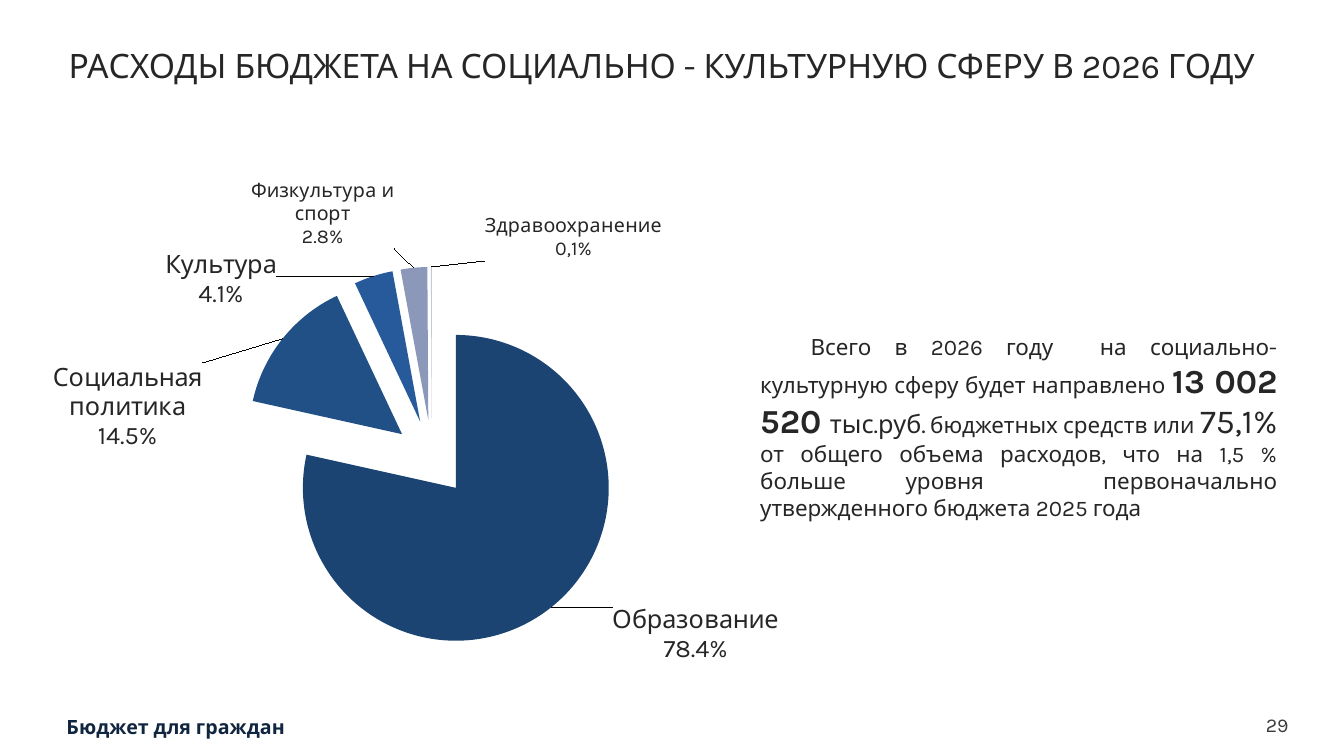
from typing import NamedTuple

import lxml.etree
import pptx
import pptx.chart.data
import pptx.dml.color
import pptx.enum.chart
import pptx.enum.text
import pptx.oxml
import pptx.oxml.ns
import pptx.util

Inches, Pt = pptx.util.Inches, pptx.util.Pt
qn = pptx.oxml.ns.qn
ALIGN = pptx.enum.text.PP_ALIGN
ANCHOR = pptx.enum.text.MSO_ANCHOR
FONT = "Karla"
COLORS = {"text": "262626", "number": "3C3C3C", "footer": "10253F",
          "education": "1C4473", "social": "215087", "culture": "265A9A",
          "sport": "8C98BA", "health": "C3C8DA"}


class Run(NamedTuple):
    text: str
    size: float
    bold: bool = False
    color: str = "text"


class Box(NamedTuple):
    left: float
    top: float
    width: float
    height: float


class Slice(NamedTuple):
    name: str
    value: float
    color: str
    size: float
    dx: float  # label shift as a share of the chart width
    dy: float  # label shift as a share of the chart height
    label: str = ""


SLICES = [
    Slice("Образование", 78.4, "education", 18, 0.06, -0.01),
    Slice("Социальная политика", 14.5, "social", 18, -0.08, 0.18),
    Slice("Культура", 4.1, "culture", 18, -0.1, 0.06),
    Slice("Физкультура и спорт", 2.8, "sport", 14, -0.02, -0.02),
    Slice("Здравоохранение", 0.1, "health", 14, 0.15, 0, "Здравоохранение\n0,1%"),
]
TITLE = [Run("РАСХОДЫ БЮДЖЕТА НА СОЦИАЛЬНО - КУЛЬТУРНУЮ СФЕРУ В 2026 ГОДУ", 24)]
SUMMARY = [
    Run("Всего в 2026 году  на социально-культурную сферу будет направлено ", 16),
    Run("13 002 520 ", 24, True),
    Run("тыс.руб.", 18),
    Run(" ", 12),
    Run("бюджетных средств или ", 16),
    Run("75,1% ", 24),
    Run("от общего объема расходов, что на 1,5 % больше уровня  "
        "первоначально утвержденного бюджета 2025 года", 16),
]


def set_attrs(obj, values: dict) -> None:
    for name, value in values.items():
        setattr(obj, name, value)


def rgb(color: str) -> pptx.dml.color.RGBColor:
    return pptx.dml.color.RGBColor.from_string(COLORS[color])


def set_font(font, size: float, bold: bool = False, color: str = "text") -> None:
    set_attrs(font, {"name": FONT, "size": Pt(size), "bold": bold})
    font.color.rgb = rgb(color)


def chart_xml(tag: str, **values):
    """Make a chart element whose children each hold one val."""
    el = lxml.etree.Element(qn(f"c:{tag}"))
    for name, value in values.items():
        lxml.etree.SubElement(el, qn(f"c:{name}")).set("val", str(value))
    return el


def layout_xml(**values):
    layout = chart_xml("layout")
    layout.append(chart_xml("manualLayout", **values))
    return layout


def fill_text(sp, box: Box, runs: list[Run], frame: dict, para: dict):
    set_attrs(sp, {k: Inches(v) for k, v in box._asdict().items()})
    tf = sp.text_frame
    set_attrs(tf, {"word_wrap": True, "vertical_anchor": ANCHOR.TOP,
                   "auto_size": pptx.enum.text.MSO_AUTO_SIZE.NONE} | frame)
    p = tf.paragraphs[0]
    set_attrs(p, {"space_before": Pt(0)} | para)
    for run in runs:
        r = p.add_run()
        r.text = run.text
        set_font(r.font, run.size, run.bold, run.color)
    return p


def label_slice(point, item: Slice) -> None:
    label = point.data_label
    if item.label:
        label.text_frame.text = item.label
        for p in label.text_frame.paragraphs:
            for r in p.runs:
                set_font(r.font, item.size)
    else:
        set_font(label.font, item.size)
    label.position = pptx.enum.chart.XL_LABEL_POSITION.OUTSIDE_END


def place_labels(ser) -> None:
    """Show name and value on two lines and shift each label."""
    for dl, item in zip(ser.iter(qn("c:dLbl")), SLICES):
        dl.find(qn("c:idx")).addnext(layout_xml(x=item.dx, y=item.dy))
        dl.find(qn("c:showCatName")).set("val", "1")
        dl.find(qn("c:showVal")).set("val", "1")
        if not item.label:
            fmt = chart_xml("numFmt")
            fmt.set("formatCode", '0.0"%"')
            fmt.set("sourceLinked", "0")
            dl.find(qn("c:layout")).addnext(fmt)
        lxml.etree.SubElement(dl, qn("c:separator")).text = "\n"


def add_pie(slide, box: Box) -> None:
    data = pptx.chart.data.CategoryChartData()
    data.categories = [item.name for item in SLICES]
    data.add_series("Series 1", [item.value for item in SLICES])
    chart = slide.shapes.add_chart(pptx.enum.chart.XL_CHART_TYPE.PIE,
                                   *map(Inches, box), data).chart
    set_attrs(chart, {"has_title": False, "has_legend": False})
    set_font(chart.font, 18)
    plot = chart.plots[0]
    plot.vary_by_categories = True
    series = plot.series[0]
    for i, item in enumerate(SLICES):
        point = series.points[i]
        point.format.fill.solid()
        point.format.fill.fore_color.rgb = rgb(item.color)
        point.format.line.fill.background()
        label_slice(point, item)
    ser = series._element
    place_labels(ser)
    explosion = chart_xml("explosion")
    explosion.set("val", "25")
    ser.find(qn("c:dPt")).addprevious(explosion)
    # Plot area position
    area = chart._chartSpace.find(".//" + qn("c:plotArea"))
    for old in area.findall(qn("c:layout")):
        area.remove(old)
    area.insert(0, layout_xml(layoutTarget="inner", xMode="edge", yMode="edge",
                              x=0.224, y=0.037, w=0.403, h=0.823))


def main() -> None:
    prs = pptx.Presentation()
    set_attrs(prs, {"slide_width": Inches(13.33), "slide_height": Inches(7.5)})
    slide = prs.slides.add_slide(prs.slide_layouts[1])

    # Title and summary
    fill_text(slide.shapes.title, Box(0.58, 0.44, 12.02, 0.76), TITLE, {},
              {"alignment": ALIGN.LEFT, "line_spacing": 0.9})
    p = fill_text(slide.placeholders[1], Box(7.44, 3.25, 5.33, 1.72), SUMMARY, {},
                  {"alignment": ALIGN.JUSTIFY})
    pPr = p._p.get_or_add_pPr()
    pPr.set("marL", "0")
    pPr.set("indent", str(Inches(0.5)))
    lxml.etree.SubElement(pPr, qn("a:buNone"))

    # Spending pie
    add_pie(slide, Box(0.28, 1.67, 9.41, 6.41))

    # Footer and page number
    no_margins = {f"margin_{side}": 0 for side in ("left", "top", "right", "bottom")}
    footers = [
        (Box(0.66, 7.09, 11.8, 0.24), Run("Бюджет для граждан", 14, True, "footer"),
         ALIGN.LEFT, ANCHOR.TOP),
        (Box(12.53, 7.07, 0.25, 0.24), Run("29", 14, False, "number"),
         ALIGN.RIGHT, ANCHOR.MIDDLE),
    ]
    for box, run, align, anchor in footers:
        fill_text(slide.shapes.add_textbox(*map(Inches, box)), box, [run],
                  no_margins | {"vertical_anchor": anchor}, {"alignment": align})

    prs.save("out.pptx")


if __name__ == "__main__":
    main()
